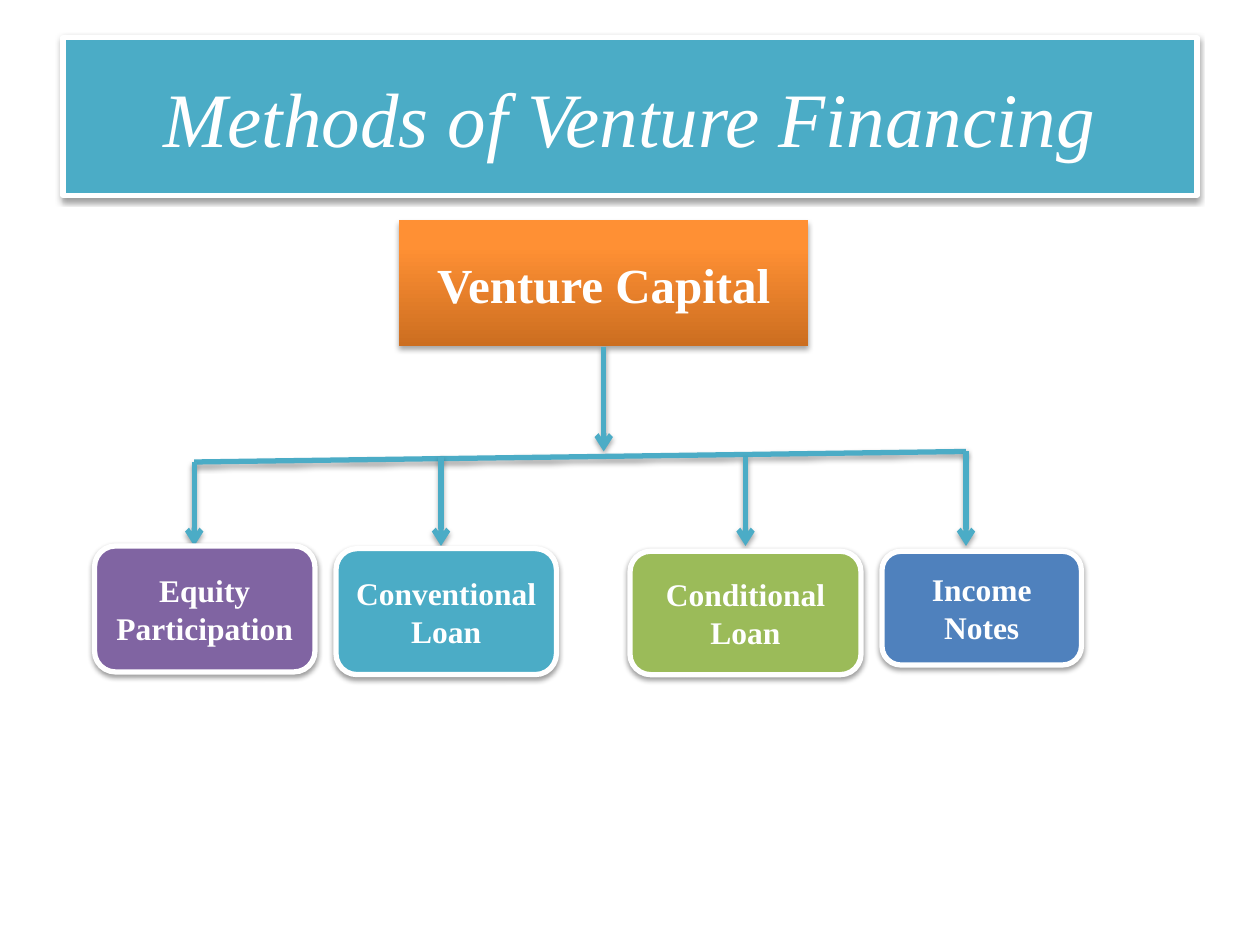
from copy import deepcopy
from dataclasses import dataclass

from lxml.etree import SubElement
from pptx import Presentation
from pptx.dml.color import RGBColor
from pptx.enum.shapes import MSO_CONNECTOR, MSO_SHAPE
from pptx.enum.text import MSO_ANCHOR, PP_ALIGN
from pptx.oxml.ns import qn
from pptx.util import Pt

WHITE, TEAL = "FFFFFF", "4BACC6"
RAMP = [(0, "CC6E20"), (0.8, "FF9034"), (1, "FF9136")]
BOLD = {"size": Pt(18), "bold": True}


@dataclass
class Box:
    text: str
    left: float
    top: float
    width: float
    height: float
    fill: str | list
    font: dict
    shape: MSO_SHAPE = MSO_SHAPE.ROUNDED_RECTANGLE


@dataclass
class Line:
    x1: float
    y1: float
    x2: float
    y2: float
    arrow: bool = True


BOXES = [
    Box("Methods of Venture Financing", 36, 21.6, 648, 90, TEAL,
        {"size": Pt(44), "italic": True}, MSO_SHAPE.RECTANGLE),
    Box("Venture Capital", 228, 126, 234, 72, RAMP,
        {"size": Pt(28), "bold": True}, MSO_SHAPE.RECTANGLE),
    Box("Equity Participation", 54, 312, 126, 72, "8064A2", BOLD),
    Box("Conventional Loan", 192, 313.5, 126, 72, TEAL, BOLD),
    Box("Conditional Loan", 360, 315, 132, 70.5, "9BBB59", BOLD),
    Box("Income Notes", 504, 315, 114, 65, "4F81BD", BOLD),
]
DROPS = [(111, 264), (252, 261), (426, 261), (552, 258)]
LINES = [Line(345, 198, 345, 258), Line(*DROPS[0], *DROPS[-1], arrow=False)]
LINES += [Line(x, y, x, 312) for x, y in DROPS]


def color(code: str) -> RGBColor:
    return RGBColor.from_string(code)


def add_shade(item, alpha: int, dist: float) -> None:
    """Give a shape or connector a soft shadow straight below it."""
    effects = SubElement(item._element.spPr, qn("a:effectLst"))
    shade = SubElement(effects, qn("a:outerShdw"), blurRad=str(Pt(3.1)),
                       dist=str(Pt(dist)), dir="5400000", rotWithShape="0")
    tint = SubElement(shade, qn("a:srgbClr"), val="000000")
    SubElement(tint, qn("a:alpha"), val=str(alpha * 1000))


def fill_ramp(shape, ramp: list) -> None:
    """Fill with a gradient that runs from the bottom up."""
    shape.fill.gradient()
    shape.fill.gradient_angle = 90
    stops = shape._element.spPr.find(".//" + qn("a:gsLst"))
    stops.append(deepcopy(stops[0]))
    for stop, (place, code) in zip(shape.fill.gradient_stops, ramp):
        stop.position = place
        stop.color.rgb = color(code)


def add_text(shape, box: Box) -> None:
    frame = shape.text_frame
    frame.word_wrap = True
    frame.vertical_anchor = MSO_ANCHOR.MIDDLE
    para = frame.paragraphs[0]
    para.alignment = PP_ALIGN.CENTER
    run = para.add_run()
    run.text = box.text
    for name, value in {"name": "Times New Roman", **box.font}.items():
        setattr(run.font, name, value)
    run.font.color.rgb = color(WHITE)


def draw_box(shapes, box: Box) -> None:
    shape = shapes.add_shape(box.shape, Pt(box.left), Pt(box.top),
                             Pt(box.width), Pt(box.height))
    if isinstance(box.fill, list):
        fill_ramp(shape, box.fill)
        shape.line.fill.background()
        add_shade(shape, 35, 1.8)
    else:
        shape.fill.solid()
        shape.fill.fore_color.rgb = color(box.fill)
        shape.line.color.rgb = color(WHITE)
        shape.line.width = Pt(3)
        add_shade(shape, 38, 1.6)
    add_text(shape, box)


def draw_line(shapes, line: Line) -> None:
    link = shapes.add_connector(MSO_CONNECTOR.STRAIGHT, Pt(line.x1), Pt(line.y1),
                                Pt(line.x2), Pt(line.y2))
    link.line.color.rgb = color(TEAL)
    link.line.width = Pt(3)
    if line.arrow:
        SubElement(link.line._get_or_add_ln(), qn("a:tailEnd"), type="arrow")
    add_shade(link, 35, 1.8)


def main() -> None:
    deck = Presentation()
    deck.slide_width, deck.slide_height = Pt(720), Pt(540)
    shapes = deck.slides.add_slide(deck.slide_layouts[6]).shapes
    for box in BOXES[:2]:
        draw_box(shapes, box)
    for line in LINES:
        draw_line(shapes, line)
    for box in BOXES[2:]:
        draw_box(shapes, box)
    deck.save("out.pptx")


if __name__ == "__main__":
    main()
